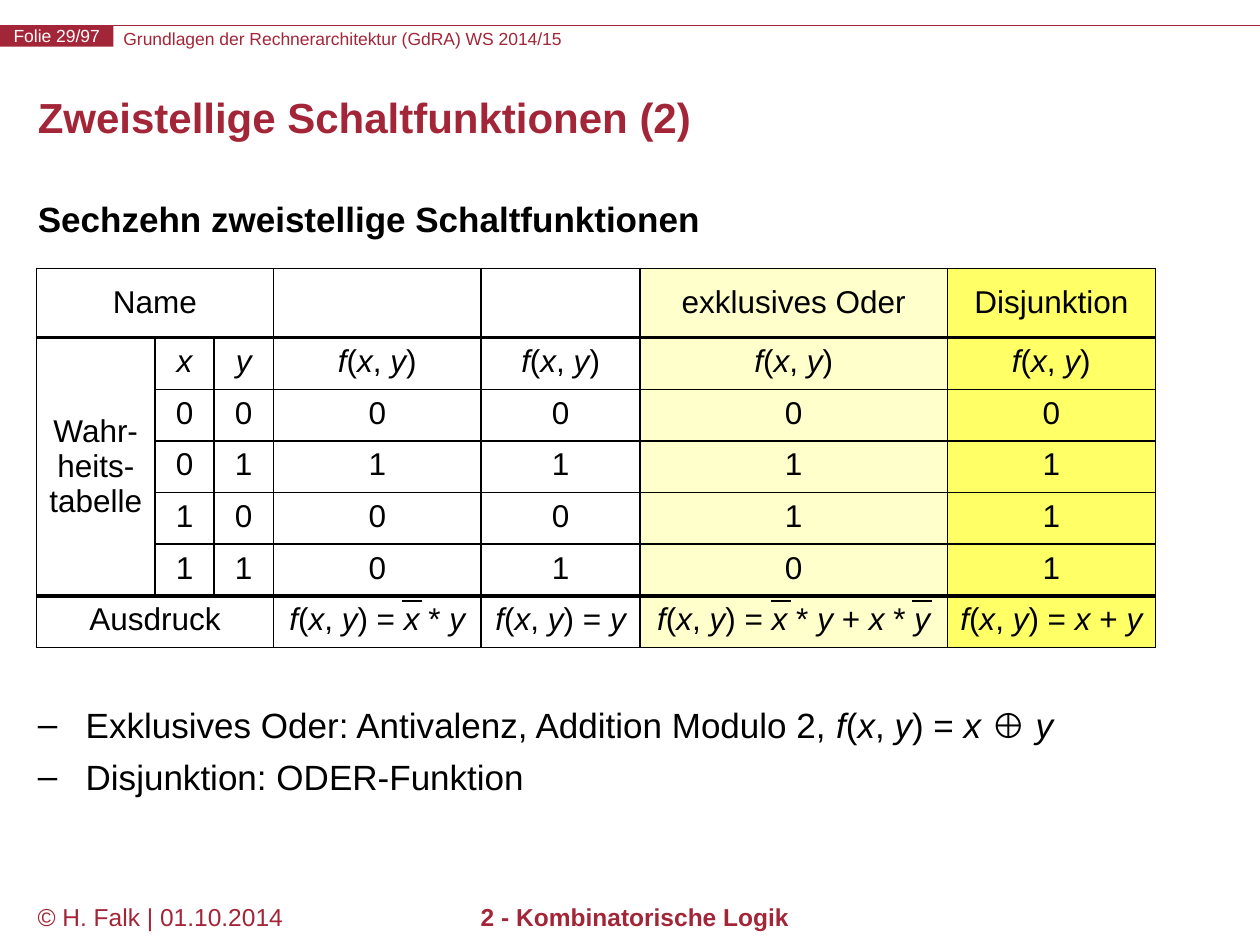
from dataclasses import dataclass
from itertools import groupby

from pptx import Presentation
from pptx.dml.color import RGBColor
from pptx.enum.shapes import MSO_CONNECTOR, MSO_SHAPE
from pptx.enum.text import MSO_ANCHOR as Anchor, MSO_AUTO_SIZE as AutoSize, PP_ALIGN as Align
from pptx.oxml.ns import qn
from pptx.util import Inches, Pt
from lxml.etree import SubElement

RED, BLACK, WHITE = "A32638", "000000", "FFFFFF"
PALE_YELLOW, YELLOW = "FFFFCC", "FFFF66"
THIN, THICK = 1, 2.25


@dataclass
class Label:
    text: str
    left: float
    top: float
    width: float
    height: float
    size: int
    bold: bool = False
    align: Align = Align.LEFT
    margins: bool = True


@dataclass
class FunctionColumn:
    name: str
    values: str
    expression: str
    width: float
    fill: str | None = None


LABELS = [
    Label("Grundlagen der Rechnerarchitektur (GdRA) WS 2014/15",
          0.98, 0.22, 6.6, 0.17, 10, margins=False),
    Label("© H. Falk | 01.10.2014", 0.2, 7.11, 2.2, 0.39, 14),
    Label("2 - Kombinatorische Logik", 2.01, 7.11, 6.06, 0.39, 14, True, Align.CENTER),
]
FUNCTIONS = [
    FunctionColumn("", "0100", "f(x, y) = x * y", 1.65),
    FunctionColumn("", "0101", "f(x, y) = y", 1.26),
    FunctionColumn("exklusives Oder", "0110", "f(x, y) = x * y + x * y", 2.44, PALE_YELLOW),
    FunctionColumn("Disjunktion", "0111", "f(x, y) = x + y", 1.65, YELLOW),
]
INPUTS = [("x", "0011"), ("y", "0101")]
OVERBARS = [3.19, 6.12, 7.24]


def rgb(value: str) -> RGBColor:
    return RGBColor.from_string(value)


def style(para, size: float, color: str, bold: bool = False, align: Align = Align.LEFT) -> None:
    para.alignment = align
    font = para.font
    font.name, font.size, font.bold = "Arial", Pt(size), bold
    font.color.rgb = rgb(color)


def add_formula(para, text: str) -> None:
    """Set variables in italics and the XOR sign in bold."""
    for (italic, bold), letters in groupby(text, lambda c: (c in "fxy", c == "⊕")):
        span = para.add_run()
        span.text = "".join(letters)
        span.font.italic, span.font.bold = italic, bold


def place(shape, left: float, top: float, width: float, height: float) -> None:
    shape.left, shape.top = Inches(left), Inches(top)
    shape.width, shape.height = Inches(width), Inches(height)


def clear_margins(frame) -> None:
    frame.margin_left = frame.margin_right = frame.margin_top = frame.margin_bottom = 0


def add_label(page, label: Label) -> None:
    box = page.shapes.add_textbox(Inches(label.left), Inches(label.top),
                                  Inches(label.width), Inches(label.height))
    frame = box.text_frame
    frame.word_wrap = True
    if not label.margins:
        clear_margins(frame)
    para = frame.paragraphs[0]
    para.text = label.text
    style(para, label.size, RED, label.bold, label.align)


def add_line(page, left: float, right: float, y: float, color: str, weight: float) -> None:
    line = page.shapes.add_connector(MSO_CONNECTOR.STRAIGHT, Inches(left), Inches(y),
                                     Inches(right), Inches(y))
    line.line.color.rgb, line.line.width = rgb(color), Pt(weight)
    SubElement(line._element.spPr, qn("a:effectLst"))


def set_borders(cell, top: float, bottom: float) -> None:
    properties = cell._tc.get_or_add_tcPr()
    for side, weight in zip("LRTB", (THIN, THIN, top, bottom)):
        line = SubElement(properties, qn(f"a:ln{side}"), w=str(Pt(weight)))
        SubElement(SubElement(line, qn("a:solidFill")), qn("a:srgbClr"), val=BLACK)


def add_header(page) -> None:
    add_line(page, 0, 10, 0.2, RED, 0.75)
    badge = page.shapes.add_shape(MSO_SHAPE.RECTANGLE, 0, Inches(0.2), Inches(0.9), Inches(0.17))
    badge.shadow.inherit = False
    badge.fill.solid()
    badge.fill.fore_color.rgb = rgb(RED)
    badge.line.fill.background()
    frame = badge.text_frame
    frame.word_wrap = False
    frame.vertical_anchor = Anchor.MIDDLE
    clear_margins(frame)
    frame.text = "Folie 29/97"
    style(frame.paragraphs[0], 10, WHITE, align=Align.CENTER)


def fill_title(title) -> None:
    place(title, 0.2, 0.6, 9.61, 0.72)
    frame = title.text_frame
    frame.text = "Zweistellige Schaltfunktionen (2)"
    frame.auto_size, frame.vertical_anchor = AutoSize.NONE, Anchor.MIDDLE
    style(frame.paragraphs[0], 24, RED, bold=True)
    frame.paragraphs[0].line_spacing = Pt(24)


def fill_body(body) -> None:
    place(body, 0.2, 1.52, 9.61, 5.46)
    frame = body.text_frame
    frame.auto_size = AutoSize.NONE
    heading = frame.paragraphs[0]
    heading.text = "Sechzehn zweistellige Schaltfunktionen"
    style(heading, 20, BLACK, bold=True)
    heading.space_before = Pt(1)
    properties = heading._p.get_or_add_pPr()
    properties.set("marL", "0")
    properties.set("indent", "0")
    SubElement(properties, qn("a:buNone")).getparent().insert(1, properties[-1])

    # The first bullet leaves room for the table
    bullets = [("Exklusives Oder: Antivalenz, Addition Modulo 2, ", "f(x, y) = x ⊕ y", 260),
               ("Disjunktion: ODER-Funktion", "", 1)]
    for text, formula, gap in bullets:
        para = frame.add_paragraph()
        para.add_run().text = text
        add_formula(para, formula)
        para.line_spacing, para.space_before = 1.2, Pt(gap)
        properties = para._p.get_or_add_pPr()
        properties.set("marL", str(Inches(0.38)))
        properties.set("indent", str(-Inches(0.38)))
        SubElement(properties, qn("a:buChar"), char="–")
        style(para, 20, BLACK)


def add_truth_table(page) -> None:
    widths = [0.94, 0.47, 0.47] + [column.width for column in FUNCTIONS]
    heights = [0.55] + [0.41] * 6
    table = page.shapes.add_table(len(heights), len(widths), Inches(0.29), Inches(2.13),
                                  Inches(sum(widths)), Inches(sum(heights))).table
    table.first_row = table.horz_banding = False
    for column, width in zip(table.columns, widths):
        column.width = Inches(width)
    for row, height in zip(table.rows, heights):
        row.height = Inches(height)
    for first, last in [((0, 0), (0, 2)), ((1, 0), (5, 0)), ((6, 0), (6, 2))]:
        table.cell(*first).merge(table.cell(*last))

    # Text of each column from top to bottom
    columns = [["Name", "Wahr-heits-tabelle", "", "", "", "", "Ausdruck"]]
    columns += [["", name, *values, ""] for name, values in INPUTS]
    columns += [[f.name, "f(x, y)", *f.values, f.expression] for f in FUNCTIONS]
    fills = [None] * 3 + [f.fill for f in FUNCTIONS]

    for c, (texts, fill) in enumerate(zip(columns, fills)):
        for r, text in enumerate(texts):
            cell = table.cell(r, c)
            last_row = r + (cell.span_height if cell.is_merge_origin else 1) - 1
            set_borders(cell, THICK if r in (1, 6) else THIN,
                        THICK if last_row in (0, 5) else THIN)
            if fill:
                cell.fill.solid()
                cell.fill.fore_color.rgb = rgb(fill)
            else:
                cell.fill.background()
            if r == 0 or (r, c) == (1, 0):
                cell.vertical_anchor = Anchor.MIDDLE
            para = cell.text_frame.paragraphs[0]
            if r in (1, 6) and c > 0:
                add_formula(para, text)
            elif text:
                para.add_run().text = text
            style(para, 18, BLACK, align=Align.CENTER)

    # Negation bars above the variables
    for left in OVERBARS:
        add_line(page, left, left + 0.16, 4.77, BLACK, 1.5)


def main() -> None:
    deck = Presentation()
    deck.slide_width, deck.slide_height = Inches(10), Inches(7.5)
    page = deck.slides.add_slide(deck.slide_layouts[1])
    add_header(page)
    for label in LABELS:
        add_label(page, label)
    fill_title(page.shapes.title)
    fill_body(page.placeholders[1])
    add_truth_table(page)
    deck.save("out.pptx")


if __name__ == "__main__":
    main()
